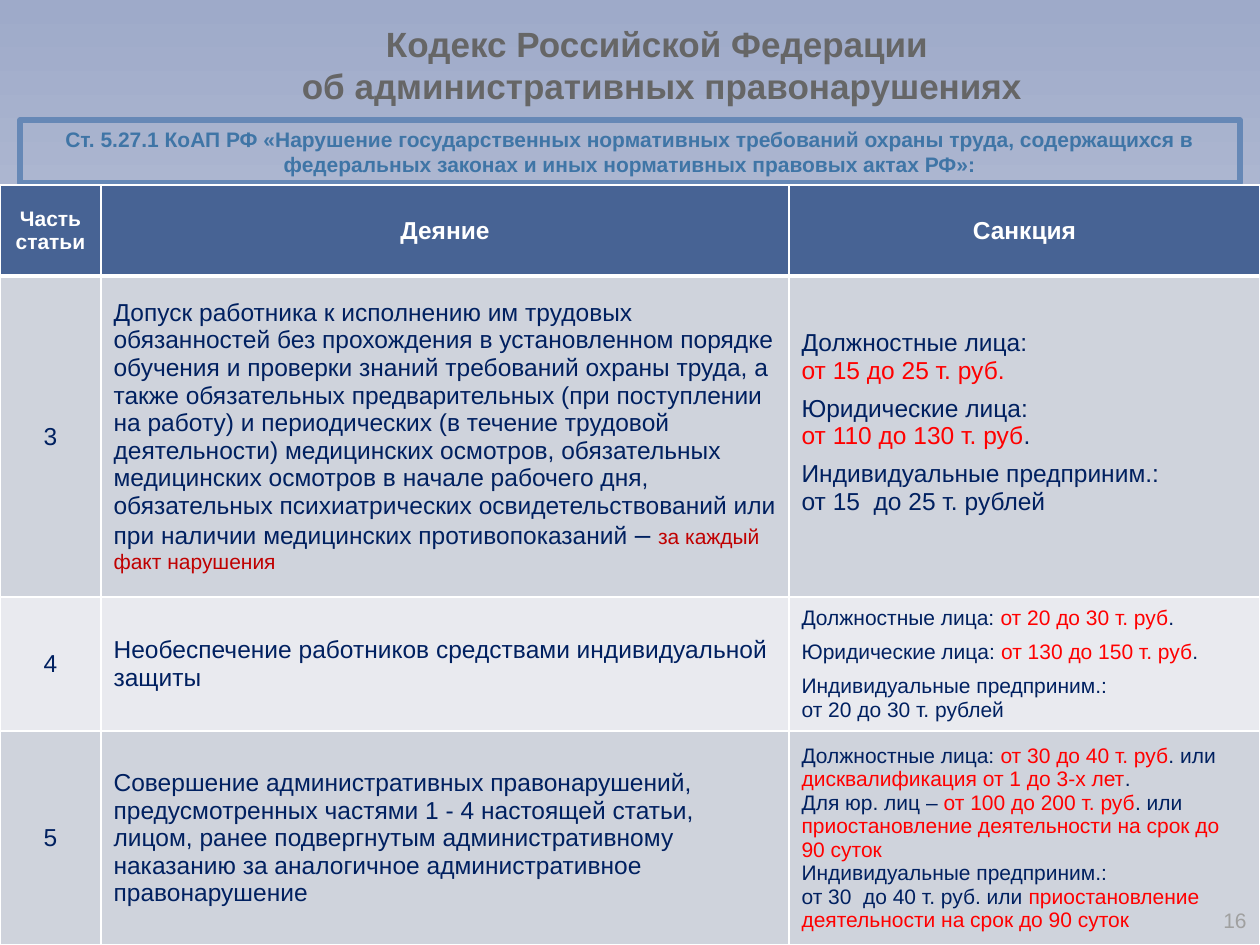
from copy import deepcopy
from dataclasses import dataclass

from lxml import etree
from pptx import Presentation, util as u
from pptx.dml.color import RGBColor
from pptx.enum import shapes, text
from pptx.oxml import parse_xml
from pptx.oxml.ns import nsdecls, qn

PX = 914400 / 126
COLORS = {
    "title": "666666", "subtitle": "3F75A6", "frame": "6688B6",
    "header": "476394", "dark_band": "CFD3DC", "light_band": "E9EAEF",
    "white": "FFFFFF", "navy": "002060", "red": "FF0000",
    "crimson": "C00000", "number": "A0A0A0",
}
BACKGROUND = {0: "9EAAC9", 50: "C5CBDC", 100: "E2E5ED"}
LEFT, CENTER, RIGHT = text.PP_ALIGN.LEFT, text.PP_ALIGN.CENTER, text.PP_ALIGN.RIGHT
MIDDLE, TOP = text.MSO_ANCHOR.MIDDLE, text.MSO_ANCHOR.TOP


@dataclass
class Span:
    text: str
    color: str = "navy"
    size: int = 14
    bold: bool = False


@dataclass
class Cell:
    paragraphs: list[list[Span]]
    align: int = CENTER
    gap: int = 0
    bottom: int = 6


def px(n: int) -> int:
    return round(n * PX)


def rgb(name: str) -> RGBColor:
    return RGBColor.from_string(COLORS[name])


def add_span(p, span: Span) -> None:
    """Add a span, giving its line breaks the format of its text."""
    for i, line in enumerate(span.text.split("\n")):
        if i:
            p.add_line_break()
            p._p[-1].append(deepcopy(r._r.rPr))
        r = p.add_run()
        r.text = line
        style = {"name": "Arial", "size": u.Pt(span.size), "bold": span.bold}
        for key, value in style.items():
            setattr(r.font, key, value)
        r.font.color.rgb = rgb(span.color)


def write(tf, cell: Cell) -> None:
    for i, spans in enumerate(cell.paragraphs):
        p = tf.add_paragraph() if i else tf.paragraphs[0]
        p.alignment = cell.align
        if i < len(cell.paragraphs) - 1:
            p.space_after = u.Pt(cell.gap)
        for span in spans:
            add_span(p, span)


def add_text(s, box: tuple[int, ...], span: Span, align: int):
    sp = s.shapes.add_textbox(*map(px, box))
    sp.text_frame.word_wrap = True
    sp.text_frame.vertical_anchor = MIDDLE
    write(sp.text_frame, Cell([[span]], align))


def add_frame(s, box: tuple[int, ...], span: Span) -> None:
    sp = s.shapes.add_shape(shapes.MSO_SHAPE.RECTANGLE, *map(px, box))
    sp.shadow.inherit = False
    sp.fill.background()
    sp.line.color.rgb, sp.line.width = rgb("frame"), u.Pt(3)
    tf = sp.text_frame
    tf.word_wrap, tf.vertical_anchor = True, TOP
    write(tf, Cell([[span]]))


def set_background(s) -> None:
    stops = "".join(f'<a:gs pos="{at * 1000}"><a:srgbClr val="{color}"/></a:gs>'
                    for at, color in BACKGROUND.items())
    fill = s.background.fill
    fill.gradient()
    grad = s._element.find(".//" + qn("a:gradFill"))
    grad.getparent().replace(grad, parse_xml(
        f'<a:gradFill {nsdecls("a")} rotWithShape="1"><a:gsLst>{stops}</a:gsLst>'
        '<a:lin ang="5400000" scaled="0"/></a:gradFill>'))


def add_borders(tc, row: int) -> None:
    """White grid, with a heavier rule below the header row."""
    widths = {"lnL": 1, "lnR": 1, "lnT": 3 if row == 1 else 1, "lnB": 1 if row else 3}
    tcPr = tc._tc.get_or_add_tcPr()
    for tag, width in widths.items():
        ln = etree.SubElement(tcPr, qn("a:" + tag), w=str(u.Pt(width)))
        solid = etree.SubElement(ln, qn("a:solidFill"))
        etree.SubElement(solid, qn("a:srgbClr"), val=COLORS["white"])


def add_grid(s, top: int, widths: list[int], heights: list[int],
             rows: list[list[Cell]]) -> None:
    table = s.shapes.add_table(len(rows), len(widths), 0, px(top),
                               px(sum(widths)), px(sum(heights))).table
    for column, width in zip(table.columns, widths):
        column.width = px(width)
    for i, (cells, height) in enumerate(zip(rows, heights)):
        table.rows[i].height = px(height)
        band = "header" if i == 0 else "dark_band" if i % 2 else "light_band"
        for j, cell in enumerate(cells):
            tc = table.cell(i, j)
            add_borders(tc, i)
            tc.fill.solid()
            tc.fill.fore_color.rgb = rgb(band)
            tc.vertical_anchor = MIDDLE
            tc.margin_bottom = px(cell.bottom)
            write(tc.text_frame, cell)


def header(label: str, size: int = 14) -> Cell:
    return Cell([[Span(label, "white", size, True)]])


def number(n: int) -> Cell:
    return Cell([[Span(str(n))]])


def act(wording: str, *extra: Span) -> Cell:
    return Cell([[Span(wording), *extra]], LEFT)


def sanction(size: int, *paragraphs: list[str], gap: int = 0, bottom: int = 6) -> Cell:
    """Each paragraph alternates navy and red pieces, beginning with navy."""
    return Cell([[Span(piece, "red" if i % 2 else "navy", size)
                  for i, piece in enumerate(pieces)] for pieces in paragraphs],
                LEFT, gap, bottom)


ROWS = [
    [header("Часть статьи", 12), header("Деяние"), header("Санкция")],
    [number(3),
     act("Допуск работника к исполнению им трудовых обязанностей без прохождения в "
         "установленном порядке обучения и проверки знаний требований охраны труда, а "
         "также обязательных предварительных (при поступлении на работу) и периодических "
         "(в течение трудовой деятельности) медицинских осмотров, обязательных "
         "медицинских осмотров в начале рабочего дня, обязательных психиатрических "
         "освидетельствований или при наличии медицинских противопоказаний ",
         Span("– ", size=16), Span("за каждый факт нарушения", "crimson", 12)),
     sanction(14, ["Должностные лица: \n", "от 15 до 25 т. руб."],
              ["Юридические лица:\n", "от 110 до 130 т. руб", "."],
              ["Индивидуальные предприним.: \nот 15  до 25 т. рублей"],
              gap=6, bottom=34)],
    [number(4),
     act("Необеспечение работников средствами индивидуальной защиты"),
     sanction(12, ["Должностные лица: ", "от 20 до 30 т. руб", "."],
              ["Юридические лица: ", "от 130 до 150 т. руб", "."],
              ["Индивидуальные предприним.: \nот 20 до 30 т. рублей"], gap=6)],
    [number(5),
     act("Совершение административных правонарушений, предусмотренных частями 1 - 4 "
         "настоящей статьи, лицом, ранее подвергнутым административному наказанию за "
         "аналогичное административное правонарушение"),
     sanction(12, ["Должностные лица: ", "от 30 до 40 т. руб", ". или ",
                   "дисквалификация от 1 до 3-х лет", "."],
              ["Для юр. лиц – ", "от 100 до 200 т. руб", ". или ",
               "приостановление деятельности на срок до \n90 суток"],
              ["Индивидуальные предприним.: \nот 30  до 40 т. руб. или ",
               "приостановление деятельности на срок до 90 суток"])],
]


def main() -> None:
    prs = Presentation()
    prs.slide_width, prs.slide_height = px(1260), px(945)
    s = prs.slides.add_slide(prs.slide_layouts[6])
    set_background(s)
    add_text(s, (145, -1, 1034, 130),
             Span("Кодекс Российской Федерации \nоб административных правонарушениях",
                  "title", 20, True), CENTER)
    add_frame(s, (20, 120, 1220, 63),
              Span("Ст. 5.27.1 КоАП РФ «Нарушение государственных нормативных требований "
                   "охраны труда, содержащихся в федеральных законах и иных нормативных "
                   "правовых актах РФ»:", "subtitle", 12, True))
    add_grid(s, 185, [101, 688, 471], [91, 321, 134, 214], ROWS)
    add_text(s, (965, 895, 294, 50), Span("16", "number", 12), RIGHT)
    prs.save("out.pptx")


if __name__ == "__main__":
    main()
